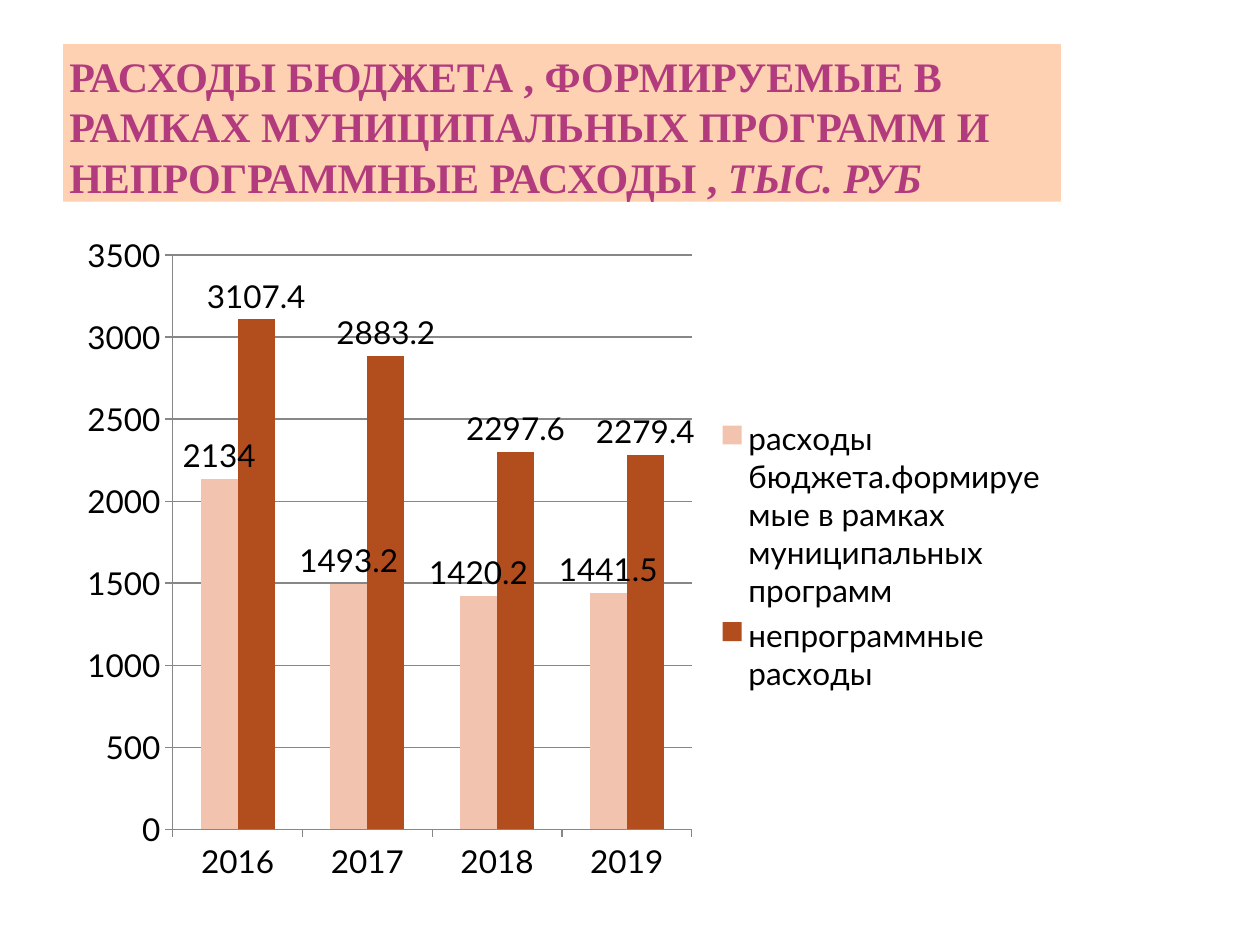
import pptx
import pptx.chart.data
import pptx.dml.color
import pptx.enum.chart
import pptx.enum.text
import pptx.oxml
import pptx.util
from pptx.util import Inches

COLORS = {
    "title_fill": "FDD1B1",
    "title_text": "B23B7E",
    "text": "000000",
    "axis": "878787",
    "program": "F2C4AF",
    "non_program": "B24D1D",
}
YEARS = ["2016", "2017", "2018", "2019"]
EXPENSES = [
    ("расходы бюджета.формируемые в рамках муниципальных программ",
     [2134, 1493.2, 1420.2, 1441.5], "program"),
    ("непрограммные расходы", [3107.4, 2883.2, 2297.6, 2279.4], "non_program"),
]


def color(name):
    return pptx.dml.color.RGBColor.from_string(COLORS[name])


def format_title(title):
    title.left, title.top = Inches(0.5), Inches(0.35)
    title.width, title.height = Inches(7.92), Inches(1.25)
    title.fill.solid()
    title.fill.fore_color.rgb = color("title_fill")

    frame = title.text_frame
    frame.word_wrap = True
    frame.auto_size = pptx.enum.text.MSO_AUTO_SIZE.NONE
    frame.vertical_anchor = pptx.enum.text.MSO_ANCHOR.BOTTOM
    frame.margin_left = frame.margin_right = Inches(0.05)
    frame.margin_top = frame.margin_bottom = 0

    paragraph = frame.paragraphs[0]
    paragraph.alignment = pptx.enum.text.PP_ALIGN.LEFT
    paragraph.font.name = "Times New Roman"
    paragraph.font.size = pptx.util.Pt(24)
    paragraph.font.bold = True
    paragraph.font.color.rgb = color("title_text")
    paragraph.add_run().text = (
        "РАСХОДЫ БЮДЖЕТА , ФОРМИРУЕМЫЕ В РАМКАХ МУНИЦИПАЛЬНЫХ ПРОГРАММ "
        "И НЕПРОГРАММНЫЕ РАСХОДЫ , ")
    unit = paragraph.add_run()
    unit.text = "ТЫС. РУБ"
    unit.font.italic = True


def place_plot(chart, left, top, width, height):
    """Fix the inner plot area, in fractions of the chart."""
    plot_area = chart._chartSpace.chart.plotArea
    for layout in plot_area.xpath("c:layout"):
        plot_area.remove(layout)
    sizes = "".join(f'<c:{tag} val="{value}"/>' for tag, value in
                    zip("xywh", (left, top, width, height)))
    plot_area.insert(0, pptx.oxml.parse_xml(
        '<c:layout xmlns:c="http://schemas.openxmlformats.org/drawingml/2006/chart">'
        '<c:manualLayout><c:layoutTarget val="inner"/>'
        '<c:xMode val="edge"/><c:yMode val="edge"/>'
        f'{sizes}</c:manualLayout></c:layout>'))


def format_axis(axis):
    axis.major_tick_mark = pptx.enum.chart.XL_TICK_MARK.OUTSIDE
    axis.minor_tick_mark = pptx.enum.chart.XL_TICK_MARK.NONE
    axis.format.line.color.rgb = color("axis")
    axis.format.line.width = pptx.util.Pt(0.75)


def format_series(series, color_name):
    series.format.fill.solid()
    series.format.fill.fore_color.rgb = color(color_name)
    series.invert_if_negative = False
    labels = series.data_labels
    labels.show_value = True
    labels.position = pptx.enum.chart.XL_LABEL_POSITION.OUTSIDE_END


def add_expense_chart(slide):
    data = pptx.chart.data.CategoryChartData()
    data.categories = YEARS
    for name, values, _ in EXPENSES:
        data.add_series(name, values)
    chart = slide.shapes.add_chart(
        pptx.enum.chart.XL_CHART_TYPE.COLUMN_CLUSTERED,
        Inches(0.5), Inches(1.76), Inches(7.92), Inches(5.3), data).chart

    chart.has_title = False
    chart.font.name = "Lato"
    chart.font.size = pptx.util.Pt(18)
    chart.font.color.rgb = color("text")
    chart.has_legend = True
    chart.legend.position = pptx.enum.chart.XL_LEGEND_POSITION.RIGHT
    chart.legend.include_in_layout = False

    format_axis(chart.category_axis)
    format_axis(chart.value_axis)
    chart.value_axis.minimum_scale = 0
    chart.value_axis.maximum_scale = 3500
    chart.value_axis.major_unit = 500
    gridlines = chart.value_axis.major_gridlines.format.line
    gridlines.color.rgb = color("axis")
    gridlines.width = pptx.util.Pt(0.75)

    plot = chart.plots[0]
    plot.vary_by_categories = False
    plot.gap_width = 150
    plot.overlap = 0
    for series, (_, _, color_name) in zip(plot.series, EXPENSES):
        format_series(series, color_name)
    place_plot(chart, 0.11, 0.05, 0.52, 0.86)


def main():
    presentation = pptx.Presentation()
    presentation.slide_width = Inches(10)
    presentation.slide_height = Inches(7.5)
    slide = presentation.slides.add_slide(presentation.slide_layouts[5])
    format_title(slide.shapes.title)
    add_expense_chart(slide)
    presentation.save("out.pptx")


if __name__ == "__main__":
    main()
